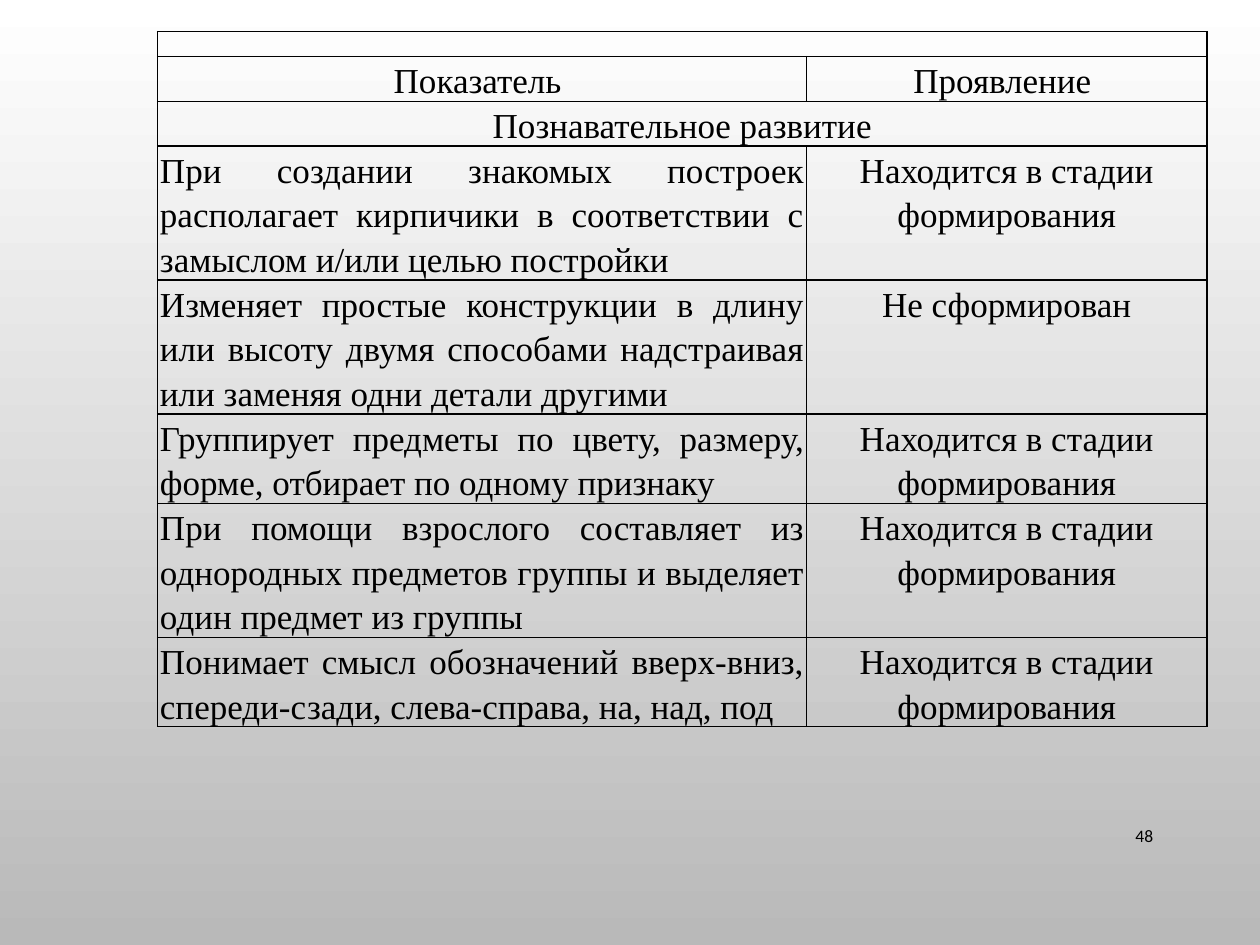
from lxml import etree
from pptx import Presentation
from pptx.dml.color import RGBColor
from pptx.enum import text
from pptx.oxml.ns import qn
from pptx.util import Inches, Pt

COLORS = {"ink": "000000", "top": "FFFFFF", "bottom": "B9B9B9"}
FORMING = "Находится в стадии формирования"
HEADER = ("Показатель ", "Проявление ")
SECTION = "Познавательное развитие"
# indicator, result, lines of text in the row
INDICATORS = [
    ("При создании знакомых построек располагает кирпичики в соответствии "
     "с замыслом и/или целью постройки", FORMING, 3),
    ("Изменяет простые конструкции в длину или высоту двумя способами "
     "надстраивая или заменяя одни детали другими", "Не сформирован", 3),
    ("Группирует предметы по цвету, размеру, форме, отбирает по одному "
     "признаку", FORMING, 2),
    ("При помощи взрослого составляет из однородных предметов группы "
     "и выделяет один предмет из группы", FORMING, 3),
    ("Понимает смысл обозначений вверх-вниз, спереди-сзади, слева-справа, "
     "на, над, под", FORMING, 2),
]
PAGE_NUMBER = "48"
COLUMNS = (5.15, 3.18)
BLANK_ROW, LINE = 0.2, 0.35
CENTER, JUSTIFY, RIGHT = (text.PP_ALIGN.CENTER, text.PP_ALIGN.JUSTIFY,
                          text.PP_ALIGN.RIGHT)


def add_run(p, content, size, font, align):
    p.alignment = align
    r = p.add_run()
    r.text = content
    r.font.size = Pt(size)
    r.font.name = font
    r.font.color.rgb = RGBColor.from_string(COLORS["ink"])


def style_cell(cell):
    """Thin black borders, no fill and narrow margins."""
    cell.margin_left = cell.margin_right = Inches(0.02)
    cell.margin_top = cell.margin_bottom = 0
    tc_pr = cell._tc.get_or_add_tcPr()
    for side in ("a:lnL", "a:lnR", "a:lnT", "a:lnB"):
        ln = etree.SubElement(tc_pr, qn(side), w=str(Pt(1)))
        fill = etree.SubElement(ln, qn("a:solidFill"))
        etree.SubElement(fill, qn("a:srgbClr"), val=COLORS["ink"])
    cell.fill.background()


def write_cell(cell, content, align):
    p = cell.text_frame.paragraphs[0]
    p.line_spacing = 1.15
    add_run(p, content, 20, "Times New Roman", align)


prs = Presentation()
prs.slide_width, prs.slide_height = Inches(10), Inches(7.5)
s = prs.slides.add_slide(prs.slide_layouts[6])

bg = s.background.fill
bg.gradient()
bg.gradient_angle = 270
for stop, position, name in zip(bg.gradient_stops, (0, 1), ("top", "bottom")):
    stop.position = position
    stop.color.rgb = RGBColor.from_string(COLORS[name])

heights = [BLANK_ROW, LINE, LINE] + [LINE * n for _, _, n in INDICATORS]
table = s.shapes.add_table(len(heights), len(COLUMNS), Inches(1.25), Inches(0.25),
                           Inches(sum(COLUMNS)), Inches(sum(heights))).table
table.first_row = table.horz_banding = False
for column, width in zip(table.columns, COLUMNS):
    column.width = Inches(width)
for row, height in zip(table.rows, heights):
    row.height = Inches(height)
    for cell in row.cells:
        style_cell(cell)

for i in (0, 2):
    table.cell(i, 0).merge(table.cell(i, 1))
for cell in table.rows[0].cells:
    cell.text_frame.paragraphs[0].font.size = Pt(10)
for j, title in enumerate(HEADER):
    write_cell(table.cell(1, j), title, CENTER)
write_cell(table.cell(2, 0), SECTION, CENTER)
for i, (indicator, result, _) in enumerate(INDICATORS, start=3):
    write_cell(table.cell(i, 0), indicator, JUSTIFY)
    write_cell(table.cell(i, 1), result, CENTER)

number = s.shapes.add_textbox(Inches(8.62), Inches(6.43), Inches(0.63), Inches(0.4))
tf = number.text_frame
tf.word_wrap = True
tf.vertical_anchor = text.MSO_ANCHOR.MIDDLE
add_run(tf.paragraphs[0], PAGE_NUMBER, 10, "Calibri", RIGHT)

prs.save("out.pptx")
